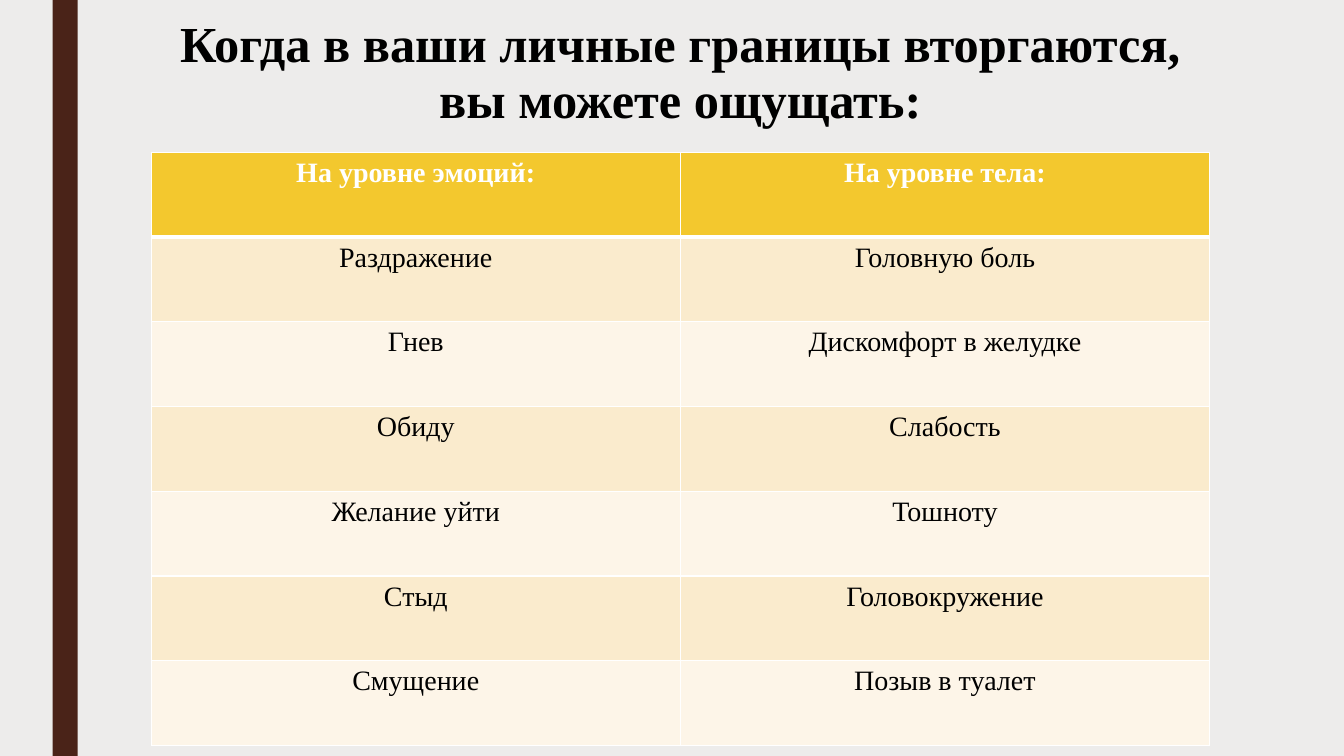
from lxml import etree
from pptx import Presentation
from pptx.dml.color import RGBColor
from pptx.enum import shapes, text
from pptx.oxml import ns
from pptx.util import Pt

FONT = "Times New Roman"
HUES = {"back": "EDECEB", "bar": "4A2318", "head": "F3C82E", "odd": "FAEBCD",
        "even": "FDF5E8", "ink": "000000", "white": "FFFFFF"}
TITLE = "Когда в ваши личные границы вторгаются, вы можете ощущать:"
ROWS = [
    ("На уровне эмоций:", "На уровне тела:"),
    ("Раздражение", "Головную боль"),
    ("Гнев", "Дискомфорт в желудке"),
    ("Обиду", "Слабость"),
    ("Желание уйти", "Тошноту"),
    ("Стыд", "Головокружение"),
    ("Смущение", "Позыв в туалет"),
]


def paint(fill, hue):
    """Fill with a solid colour from the palette."""
    fill.solid()
    fill.fore_color.rgb = RGBColor.from_string(HUES[hue])


def style(para, size, hue, bold):
    """Centre a paragraph and set its font."""
    para.alignment = text.PP_ALIGN.CENTER
    font = para.font
    font.name, font.size, font.bold = FONT, Pt(size), bold
    font.color.rgb = RGBColor.from_string(HUES[hue])


def edge(cell, side, width):
    """Draw a white border on one side of a cell."""
    props = cell._tc.get_or_add_tcPr()
    line = etree.SubElement(props, ns.qn("a:ln" + side), w=str(Pt(width)))
    solid = etree.SubElement(line, ns.qn("a:solidFill"))
    etree.SubElement(solid, ns.qn("a:srgbClr"), val=HUES["white"])


def add_bar(slide, x, y, w, h):
    """Place the dark vertical bar."""
    bar = slide.shapes.add_shape(shapes.MSO_SHAPE.RECTANGLE, Pt(x), Pt(y), Pt(w), Pt(h))
    bar.shadow.inherit = False
    paint(bar.fill, "bar")
    bar.line.fill.background()


def add_title(slide, x, y, w, h):
    """Place and format the title."""
    title = slide.shapes.title
    title.left, title.top, title.width, title.height = Pt(x), Pt(y), Pt(w), Pt(h)
    frame = title.text_frame
    frame.text = TITLE
    frame.word_wrap = True
    frame.auto_size = text.MSO_AUTO_SIZE.NONE
    frame.vertical_anchor = text.MSO_ANCHOR.MIDDLE
    para = frame.paragraphs[0]
    para.line_spacing = 0.93
    style(para, 36, "ink", True)


def add_grid(slide, x, y, w, h):
    """Place the table of feelings with banded rows."""
    grid = slide.shapes.add_table(len(ROWS), len(ROWS[0]), Pt(x), Pt(y), Pt(w), Pt(h)).table
    for i, row in enumerate(ROWS):
        head = i == 0
        for j, word in enumerate(row):
            cell = grid.cell(i, j)
            cell.text = word
            style(cell.text_frame.paragraphs[0], 20, "white" if head else "ink", head)
            for side in "LRTB":
                thick = (head and side == "B") or (i == 1 and side == "T")
                edge(cell, side, 3 if thick else 1)
            paint(cell.fill, "head" if head else "odd" if i % 2 else "even")


def main():
    """Build the slide and save it."""
    deck = Presentation()
    deck.slide_width, deck.slide_height = Pt(960), Pt(540)
    slide = deck.slides.add_slide(deck.slide_layouts[5])
    paint(slide.background.fill, "back")
    add_bar(slide, 37.5, 0, 18, 540)
    add_title(slide, 108, 11.5, 756, 82)
    add_grid(slide, 108, 108.7, 756, 424)
    deck.save("out.pptx")


if __name__ == "__main__":
    main()
